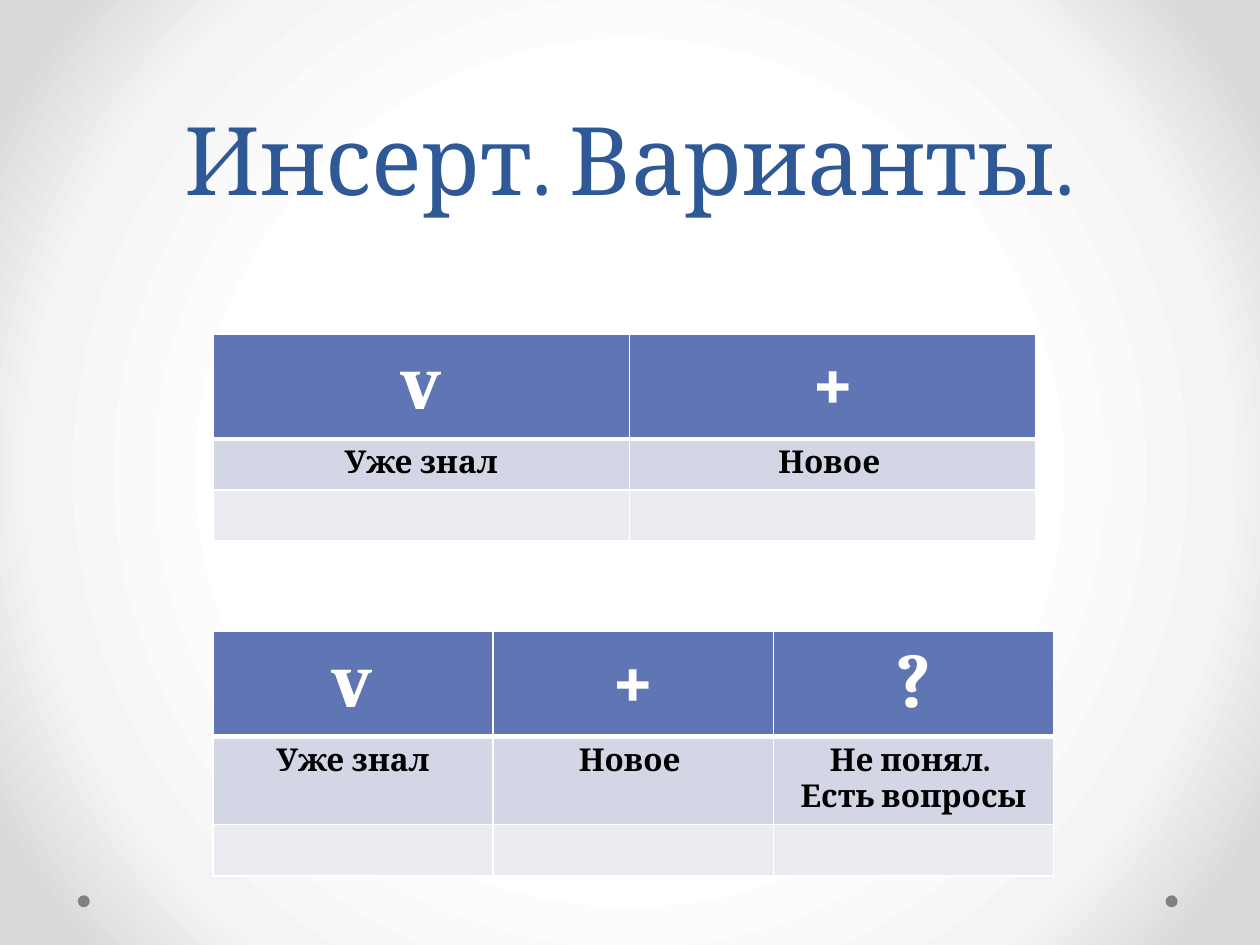
from lxml import etree
from pptx import Presentation
from pptx.dml.color import RGBColor
from pptx.enum.shapes import MSO_SHAPE
from pptx.enum.text import MSO_ANCHOR, PP_ALIGN
from pptx.oxml.ns import qn
from pptx.util import Cm, Pt

OVAL = MSO_SHAPE.OVAL
CENTER = PP_ALIGN.CENTER
BOTTOM = MSO_ANCHOR.BOTTOM

FONT = "Cambria"
WHITE = RGBColor(0xFF, 0xFF, 0xFF)
BLACK = RGBColor(0, 0, 0)
TITLE_BLUE = RGBColor(0x2F, 0x58, 0x97)
HEADER_BLUE = RGBColor(0x60, 0x76, 0xB4)
LABEL_BLUE = RGBColor(0xD2, 0xD6, 0xE5)
ANSWER_BLUE = RGBColor(0xEA, 0xEC, 0xF2)
DOT_GRAY = RGBColor(0x80, 0x80, 0x80)
PALE_GRAY = RGBColor(0xF4, 0xF4, 0xF4)
EDGE_GRAY = RGBColor(0xDA, 0xDA, 0xDA)
GLOW = [(50, WHITE), (76, PALE_GRAY), (92, EDGE_GRAY)]

TABLE_LEFT = 4.29
HEADER_HEIGHT = 2.01
ROW_HEIGHT = 1.03


def add_color(parent, color):
    etree.SubElement(parent, qn("a:srgbClr"), val=str(color))


def set_background(slide):
    fill = slide.background.fill
    fill.gradient()
    gradient = slide.background._cSld.find(".//" + qn("a:gradFill"))
    for part in list(gradient):
        gradient.remove(part)
    stops = etree.SubElement(gradient, qn("a:gsLst"))
    for percent, color in GLOW:
        stop = etree.SubElement(stops, qn("a:gs"), pos=str(percent * 1000))
        add_color(stop, color)
    circle = etree.SubElement(gradient, qn("a:path"), {"path": "circle"})
    middle = dict.fromkeys("ltrb", "50000")
    etree.SubElement(circle, qn("a:fillToRect"), middle)


def add_dot(slide, left):
    dot = slide.shapes.add_shape(OVAL, Cm(left), Cm(18.05), Cm(0.24), Cm(0.24))
    dot.shadow.inherit = False
    dot.fill.solid()
    dot.fill.fore_color.rgb = DOT_GRAY
    dot.line.fill.background()


def write_line(paragraph, text, size, color, bold):
    paragraph.alignment = CENTER
    run = paragraph.add_run()
    run.text = text
    run.font.name = FONT
    run.font.size = Pt(size)
    run.font.color.rgb = color
    run.font.bold = bold


def add_title(slide, text):
    title = slide.shapes.add_textbox(Cm(1.27), 0, Cm(22.86), Cm(4.45))
    frame = title.text_frame
    frame.word_wrap = True
    frame.vertical_anchor = BOTTOM
    heading = frame.paragraphs[0]
    heading.line_spacing = Pt(58)
    write_line(heading, text, 54, TITLE_BLUE, False)


def set_borders(cell, top, bottom):
    properties = cell._tc.get_or_add_tcPr()
    for side, width in (("L", 1), ("R", 1), ("T", top), ("B", bottom)):
        border = etree.SubElement(properties, qn("a:ln" + side), w=str(Pt(width)))
        add_color(etree.SubElement(border, qn("a:solidFill")), WHITE)


def fill_cell(cell, lines, size, color):
    frame = cell.text_frame
    for number, text in enumerate(lines):
        paragraph = frame.add_paragraph() if number else frame.paragraphs[0]
        write_line(paragraph, text, size, color, True)


def add_insert_table(slide, top, widths, label_height, signs, labels):
    rows = [
        (HEADER_HEIGHT, HEADER_BLUE, signs, 44, WHITE, 1, 3),
        (label_height, LABEL_BLUE, labels, 18, BLACK, 3, 1),
        (ROW_HEIGHT, ANSWER_BLUE, [[]] * len(widths), 18, BLACK, 1, 1),
    ]
    total_height = sum(row[0] for row in rows)
    table = slide.shapes.add_table(
        len(rows), len(widths), Cm(TABLE_LEFT), Cm(top),
        Cm(sum(widths)), Cm(total_height),
    ).table
    for column, width in zip(table.columns, widths):
        column.width = Cm(width)
    for index, (height, shade, texts, size, color, above, below) in enumerate(rows):
        table.rows[index].height = Cm(height)
        for cell, lines in zip(table.rows[index].cells, texts):
            set_borders(cell, above, below)
            cell.fill.solid()
            cell.fill.fore_color.rgb = shade
            fill_cell(cell, lines, size, color)


def main():
    deck = Presentation()
    deck.slide_width, deck.slide_height = Cm(25.4), Cm(19.05)
    slide = deck.slides.add_slide(deck.slide_layouts[6])
    set_background(slide)
    for left in (23.5, 1.57):
        add_dot(slide, left)
    add_title(slide, "Инсерт. Варианты.")
    signs = [["v"], ["+"], ["?"]]
    labels = [["Уже знал"], ["Новое "], ["Не понял. ", "Есть вопросы"]]
    add_insert_table(slide, 6.73, [8.4, 8.2], ROW_HEIGHT, signs[:2], labels[:2])
    add_insert_table(slide, 12.73, [5.65] * 3, 1.7, signs, labels)
    deck.save("out.pptx")


if __name__ == "__main__":
    main()
